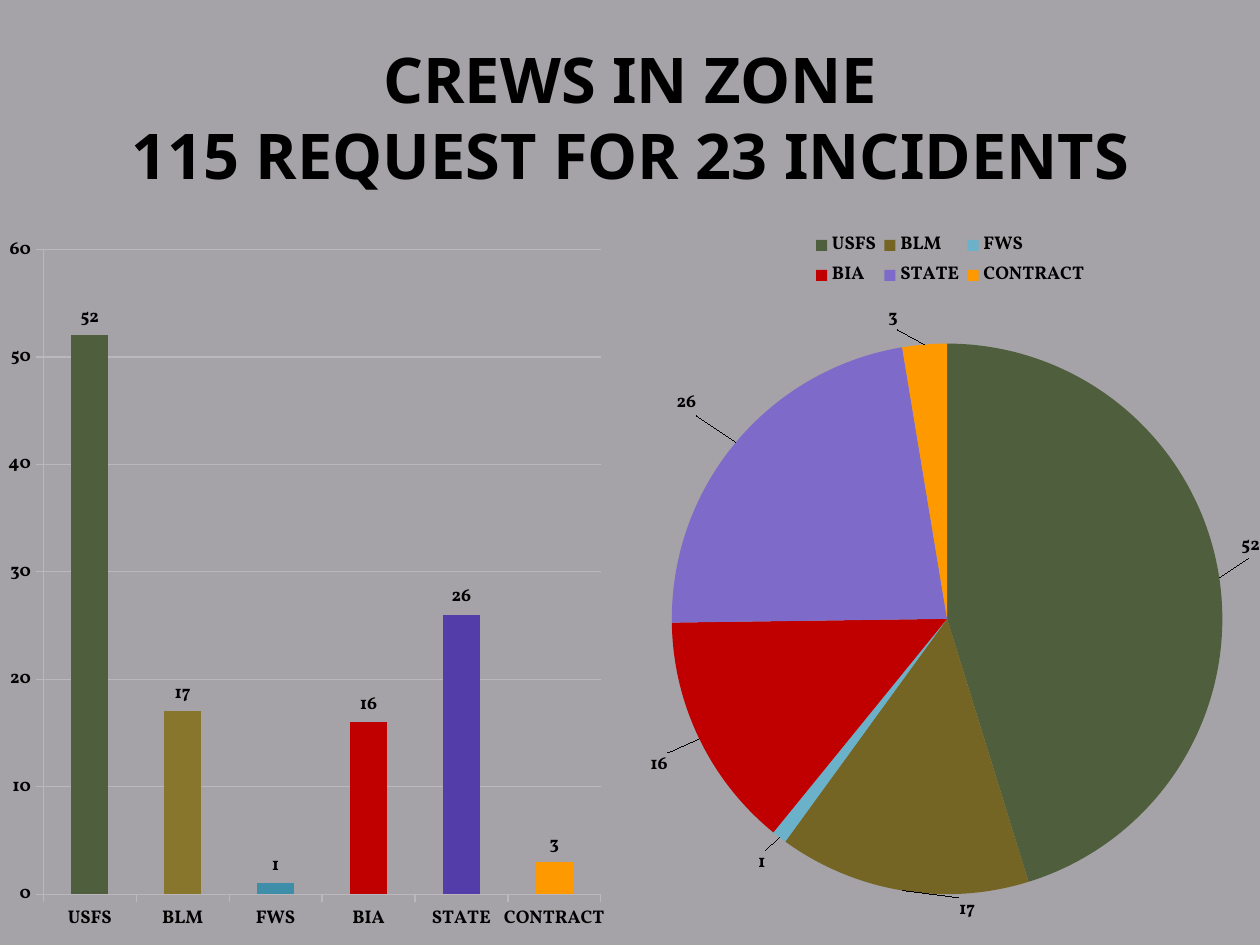
"""Build the slide on crews in the zone, with a column chart and a pie chart."""
from lxml import etree
from pptx import Presentation
from pptx.chart.data import CategoryChartData
from pptx.dml.color import RGBColor as RGB
from pptx.enum.chart import XL_CHART_TYPE as CT, XL_LABEL_POSITION as LP
from pptx.enum.chart import XL_LEGEND_POSITION as LegendPos, XL_TICK_MARK as Tick
from pptx.enum.text import MSO_ANCHOR, MSO_AUTO_SIZE, PP_ALIGN
from pptx.oxml.ns import qn
from pptx.util import Pt

THEME = {
    "bg": "A5A3A8", "text": "000000", "grid": "BAB8BD",
    "title": {"name": "Noto Sans", "size": Pt(36), "bold": True},
    "chart": {"name": "Vollkorn", "size": Pt(10.5), "bold": True},
    "columns": ["4F5E3C", "88762C", "3E8EA9", "C00000", "533EA9", "FF9900"],
    "slices": ["4F5E3C", "756525", "6BB1C9", "C00000", "7E6BC9", "FF9900"],
}
CREWS = {"USFS": 52, "BLM": 17, "FWS": 1, "BIA": 16, "STATE": 26, "CONTRACT": 3}
LABEL_SHIFTS = [(0.035, -0.025), (0.12, 0), (-0.015, 0.01),
                (-0.04, 0.015), (-0.055, -0.03), (-0.05, -0.01)]


def style(font, values):
    for name, value in values.items():
        setattr(font, name, value)
    font.color.rgb = RGB.from_string(THEME["text"])


def set_layout(parent, index, **values):
    for old in parent.findall(qn("c:layout")):
        parent.remove(old)
    layout = etree.Element(qn("c:layout"))
    manual = etree.SubElement(layout, qn("c:manualLayout"))
    for name, value in values.items():
        etree.SubElement(manual, qn(f"c:{name}")).set("val", str(value))
    parent.insert(index, layout)


prs = Presentation()
prs.slide_width, prs.slide_height = Pt(720), Pt(540)
s = prs.slides.add_slide(prs.slide_layouts[5])
s.background.fill.solid()
s.background.fill.fore_color.rgb = RGB.from_string(THEME["bg"])

title = s.shapes.title
title.left, title.top, title.width, title.height = Pt(36), Pt(21.6), Pt(648), Pt(90)
tf = title.text_frame
tf.text = "CREWS IN ZONE\v115 REQUEST FOR 23 INCIDENTS"
for name, value in {"vertical_anchor": MSO_ANCHOR.MIDDLE, "word_wrap": True,
                    "auto_size": MSO_AUTO_SIZE.NONE}.items():
    setattr(tf, name, value)
p = tf.paragraphs[0]
p.alignment = PP_ALIGN.CENTER
for r in p.runs:
    style(r.font, THEME["title"])

data = CategoryChartData()
data.categories = list(CREWS)
data.add_series("Series 1", list(CREWS.values()))
charts = []
for kind, left, colors, (x, y, w, h) in (
    (CT.COLUMN_CLUSTERED, 0, THEME["columns"], (0.07, 0.04, 0.9, 0.89)),
    (CT.PIE, 366, THEME["slices"], (0.05, 0.17, 0.89, 0.76)),
):
    chart = s.shapes.add_chart(kind, Pt(left), Pt(126), Pt(354), Pt(414), data).chart
    chart.has_title = chart.has_legend = False
    style(chart.font, THEME["chart"])
    set_layout(chart.element.find(".//" + qn("c:plotArea")), 0, layoutTarget="inner",
               xMode="edge", yMode="edge", x=x, y=y, w=w, h=h)
    series = chart.plots[0].series[0]
    labels = series.data_labels
    labels.show_value = True
    labels.position = LP.OUTSIDE_END
    style(labels.font, THEME["chart"])
    for i, color in enumerate(colors):
        fill = series.points[i].format.fill
        fill.solid()
        fill.fore_color.rgb = RGB.from_string(color)
    charts.append(chart)

columns, pie = charts
columns.plots[0].gap_width = 150
columns.plots[0].vary_by_categories = False
grid = columns.value_axis.major_gridlines.format.line
for line in (grid, columns.value_axis.format.line, columns.category_axis.format.line):
    line.color.rgb = RGB.from_string(THEME["grid"])
    line.width = Pt(0.75)
for axis in (columns.value_axis, columns.category_axis):
    axis.major_tick_mark = Tick.OUTSIDE
for name, value in {"minimum_scale": 0, "maximum_scale": 60, "major_unit": 10}.items():
    setattr(columns.value_axis, name, value)

pie.plots[0].vary_by_categories = True
pie.has_legend = True
pie.legend.position = LegendPos.TOP
pie.legend.include_in_layout = False
style(pie.legend.font, THEME["chart"])
set_layout(pie.element.find(".//" + qn("c:legend")), 1, xMode="edge", yMode="edge",
           x=0.27, y=0.01, w=0.46, h=0.09)
points = pie.plots[0].series[0].points
for i in range(len(CREWS)):
    points[i].data_label.position = LP.OUTSIDE_END
for label, (dx, dy) in zip(pie.element.iter(qn("c:dLbl")), LABEL_SHIFTS):
    set_layout(label, 1, x=dx, y=dy)

prs.save("out.pptx")
